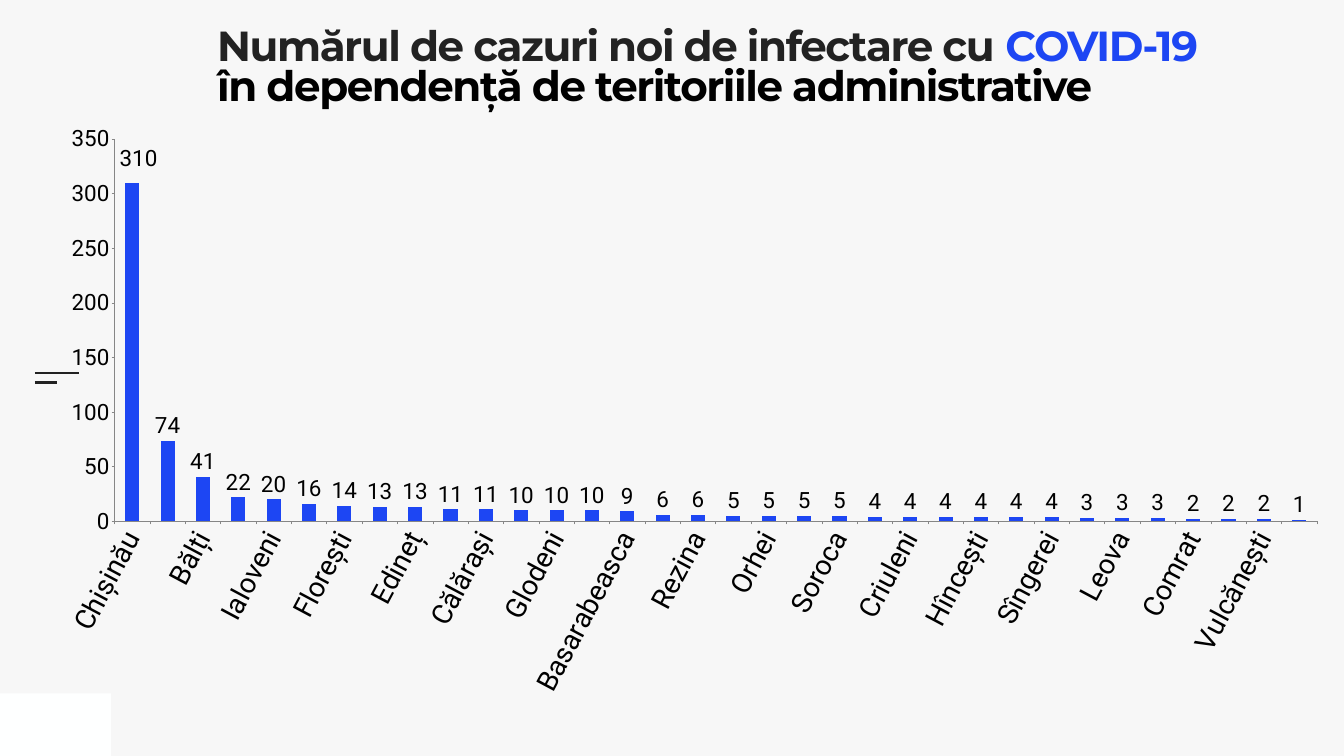
from dataclasses import dataclass

import lxml.etree
import pptx
import pptx.chart.data
import pptx.dml.color
import pptx.enum.chart
import pptx.enum.shapes
import pptx.oxml.ns
import pptx.oxml.xmlchemy
import pptx.util

Pt = pptx.util.Pt
qn = pptx.oxml.ns.qn

BLUE = "1D46F3"
DARK = "222222"
BLACK = "000000"
GREY = "868686"


@dataclass
class Rule:
    left: float
    top: float
    length: float


@dataclass
class Run:
    text: str
    colour: str


RULES = [Rule(49.7, 533.5, 63.4), Rule(49.7, 546.5, 31.7)]
TITLE = [
    [Run("Numărul de cazuri noi de infectare cu ", DARK), Run("COVID-19", BLUE)],
    [Run("în dependență de teritoriile administrative", BLACK)],
]
CASES = {
    "Chișinău": 310, "Transnistria": 74, "Bălți": 41, "Strășeni": 22,
    "Ialoveni": 20, "Cimișlia": 16, "Florești": 14, "Anenii Noi": 13,
    "Edineț": 13, "Cahul": 11, "Călărași": 11, "Fălești": 10,
    "Glodeni": 10, "Rîșcani": 10, "Basarabeasca": 9, "Nisporeni": 6,
    "Rezina": 6, "Briceni": 5, "Orhei": 5, "Șoldănești": 5,
    "Soroca": 5, "Cantemir": 4, "Criuleni": 4, "Dondușeni": 4,
    "Hîncești": 4, "Ocnița": 4, "Sîngerei": 4, "Drochia": 3,
    "Leova": 3, "Taraclia": 3, "Comrat": 2, "Ștefan Vodă": 2,
    "Vulcănești": 2, "Căușeni": 1,
}


def rgb(colour: str) -> pptx.dml.color.RGBColor:
    return pptx.dml.color.RGBColor.from_string(colour)


def set_font(font, size: float, colour: str, name: str) -> None:
    font.size = Pt(size)
    font.name = name
    font.color.rgb = rgb(colour)


def add_corner(s) -> None:
    sp = s.shapes.add_shape(
        pptx.enum.shapes.MSO_SHAPE.RECTANGLE, Pt(0), Pt(990.7), Pt(158.4), Pt(89.3))
    sp.shadow.inherit = False
    sp.fill.solid()
    sp.fill.fore_color.rgb = rgb("FEFFFF")
    sp.line.fill.background()


def add_rule(s, rule: Rule) -> None:
    line = s.shapes.add_connector(
        pptx.enum.shapes.MSO_CONNECTOR.STRAIGHT,
        Pt(rule.left), Pt(rule.top), Pt(rule.left + rule.length), Pt(rule.top))
    line.line.color.rgb = rgb(DARK)
    line.line.width = Pt(3)
    lxml.etree.SubElement(line._element.spPr, qn("a:effectLst"))


def add_title(s, lines: list[list[Run]]) -> None:
    tf = s.shapes.add_textbox(Pt(310.3), Pt(41.8), Pt(1441.4), Pt(196.6)).text_frame
    tf.word_wrap = True
    tf.margin_left = tf.margin_top = tf.margin_right = tf.margin_bottom = Pt(0)
    for i, runs in enumerate(lines):
        p = tf.add_paragraph() if i else tf.paragraphs[0]
        p.line_spacing = 0.8
        for run in runs:
            r = p.add_run()
            r.text = run.text
            set_font(r.font, 60, run.colour, "Montserrat")
            r.font.bold = True
            r._r.get_or_add_rPr().set("spc", "-200")


def manual_layout(**values: str | float):
    layout = pptx.oxml.xmlchemy.OxmlElement("c:layout")
    manual = lxml.etree.SubElement(layout, qn("c:manualLayout"))
    for tag, value in values.items():
        lxml.etree.SubElement(manual, qn(f"c:{tag}")).set("val", str(value))
    return layout


def style_axis(axis, size: float) -> None:
    axis.has_major_gridlines = False
    axis.major_tick_mark = pptx.enum.chart.XL_TICK_MARK.OUTSIDE
    axis.minor_tick_mark = pptx.enum.chart.XL_TICK_MARK.NONE
    axis.format.line.color.rgb = rgb(GREY)
    axis.format.line.width = Pt(0.75)
    set_font(axis.tick_labels.font, size, BLACK, "Roboto")


def add_cases_chart(s, cases: dict[str, int]) -> None:
    data = pptx.chart.data.CategoryChartData()
    data.categories = list(cases)
    data.add_series("Series 1", list(cases.values()))
    chart = s.shapes.add_chart(
        pptx.enum.chart.XL_CHART_TYPE.COLUMN_CLUSTERED,
        Pt(82.1), Pt(180), Pt(1812.2), Pt(853.2), data).chart
    chart.has_legend = False
    chart.has_title = False
    set_font(chart.font, 40, BLACK, "Roboto")

    area = chart._chartSpace.chart.plotArea
    for old in area.findall(qn("c:layout")):
        area.remove(old)
    area.insert(0, manual_layout(
        layoutTarget="inner", xMode="edge", yMode="edge",
        x=0.045, y=0.022, w=0.948, h=0.64))

    style_axis(chart.value_axis, 32)
    chart.value_axis.minimum_scale = 0
    chart.value_axis.maximum_scale = 350
    chart.value_axis.major_unit = 50
    style_axis(chart.category_axis, 40)
    cat = chart.category_axis._element
    cat.find(qn("c:txPr")).find(qn("a:bodyPr")).set("rot", "-3720000")
    skip = pptx.oxml.xmlchemy.OxmlElement("c:tickLblSkip")
    skip.set("val", "2")
    cat.find(qn("c:noMultiLvlLbl")).addprevious(skip)

    plot = chart.plots[0]
    plot.gap_width = 150
    plot.vary_by_categories = False
    series = plot.series[0]
    series.format.fill.solid()
    series.format.fill.fore_color.rgb = rgb(BLUE)
    labels = series.data_labels
    labels.show_value = True
    first = series.points[0].data_label
    for label in (labels, first):
        set_font(label.font, 32, BLACK, "Roboto")
        label.position = pptx.enum.chart.XL_LABEL_POSITION.OUTSIDE_END
    first_label = labels._element.find(qn("c:dLbl"))
    first_label.find(qn("c:idx")).addnext(manual_layout(x=0.005, y=-0.015))


def main() -> None:
    prs = pptx.Presentation()
    prs.slide_width, prs.slide_height = Pt(1920.24), Pt(1080)
    s = prs.slides.add_slide(prs.slide_layouts[6])
    s.background.fill.solid()
    s.background.fill.fore_color.rgb = rgb("F7F7F7")
    add_corner(s)
    for rule in RULES:
        add_rule(s, rule)
    add_title(s, TITLE)
    add_cases_chart(s, CASES)
    prs.save("out.pptx")


if __name__ == "__main__":
    main()
